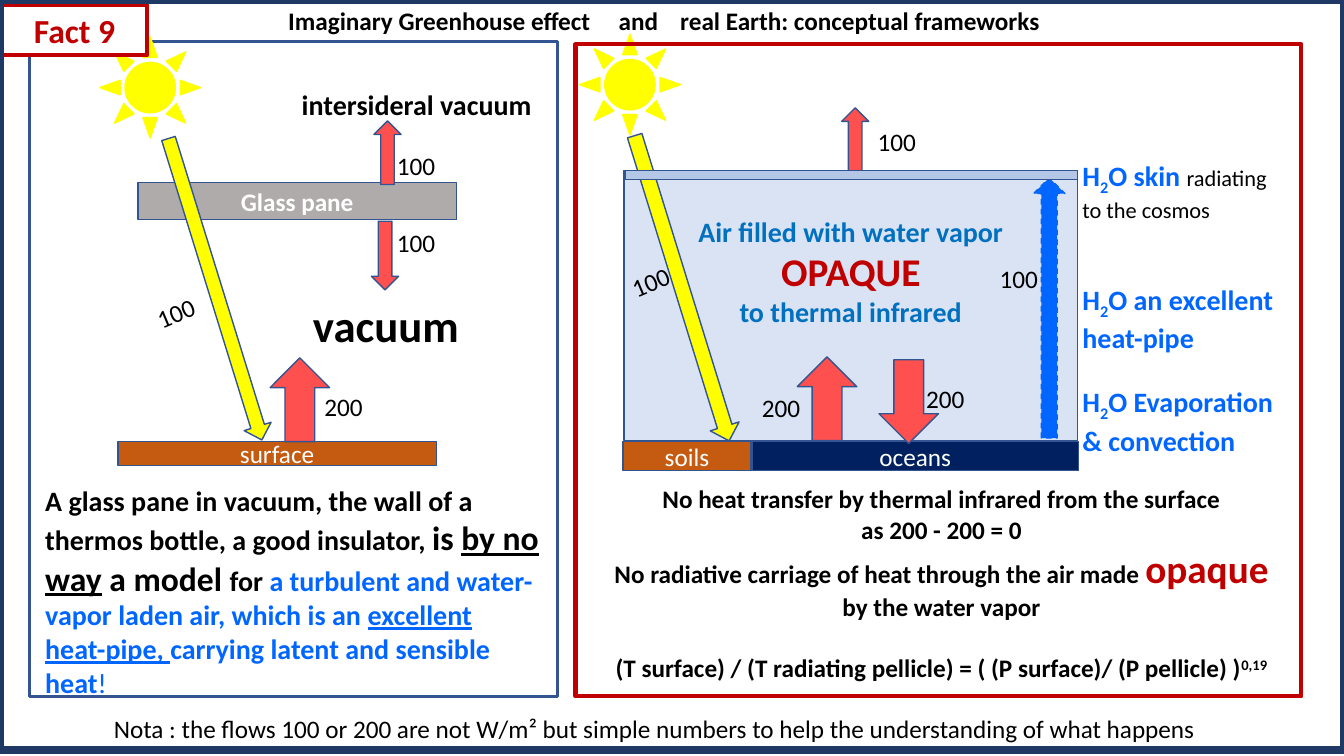
from dataclasses import dataclass

from pptx import Presentation
from pptx.dml.color import RGBColor
from pptx.enum.dml import MSO_LINE
from pptx.enum.shapes import MSO_SHAPE
from pptx.enum.text import MSO_ANCHOR, MSO_AUTO_SIZE, PP_ALIGN
from pptx.util import Pt


@dataclass(frozen=True)
class Theme:
    font: str = "Calibri"
    black: str = "000000"
    white: str = "FFFFFF"
    edge: str = "325491"
    frame: str = "203864"
    dark_red: str = "C00000"
    red: str = "FF5050"
    yellow: str = "FFFF00"
    water: str = "0066FF"
    vapor: str = "0070C0"
    air: str = "DAE3F3"
    skin: str = "B4C7E7"
    glass: str = "AFABAB"
    soil: str = "C55A11"
    sea: str = "002060"
    small: int = 16
    body: int = 18
    large: int = 20
    title: int = 24
    loud: int = 28
    huge: int = 32


T = Theme()
PLAIN = {"size": T.body, "color": T.black}
BOLD = PLAIN | {"bold": True}
LABEL = PLAIN | {"color": T.white}
LEAD = BOLD | {"size": T.large}
STRONG = BOLD | {"size": T.title}
BLUE = LEAD | {"color": T.water}
VAPOR = LEAD | {"color": T.vapor}
OPAQUE = BOLD | {"size": T.loud, "color": T.dark_red}
NOTE = PLAIN | {"size": T.small}
LINED = {"underline": True}
SUB = BLUE | {"baseline": -25000}
SUPER = BOLD | {"baseline": 30000}


def style(run, form):
    font = run.font
    font.name = T.font
    for name, value in form.items():
        if name == "color":
            font.color.rgb = RGBColor.from_string(value)
        elif name == "baseline":
            run._r.get_or_add_rPr().set(name, str(value))
        else:
            setattr(font, name, Pt(value) if name == "size" else value)


def write(frame, paras, align=PP_ALIGN.CENTER, gaps=None):
    """Fill a frame; each paragraph is a list of (text, format) runs."""
    frame.word_wrap = True
    for i, runs in enumerate(paras):
        para = frame.add_paragraph() if i else frame.paragraphs[0]
        para.alignment = align
        if gaps and i in gaps:
            para.space_before = Pt(gaps[i])
        for text, form in runs:
            run = para.add_run()
            run.text = text
            style(run, form)


def add_text(slide, place, paras, align=PP_ALIGN.LEFT, turn=0, gaps=None):
    box = slide.shapes.add_textbox(*map(Pt, place))
    box.rotation = turn
    write(box.text_frame, paras, align, gaps)
    box.text_frame.auto_size = MSO_AUTO_SIZE.SHAPE_TO_FIT_TEXT
    return box


def add_form(slide, place, fill=None, edge=T.edge, width=1, kind=MSO_SHAPE.RECTANGLE):
    form = slide.shapes.add_shape(kind, *map(Pt, place))
    form.shadow.inherit = False
    if fill:
        form.fill.solid()
        form.fill.fore_color.rgb = RGBColor.from_string(fill)
    else:
        form.fill.background()
    form.line.color.rgb = RGBColor.from_string(edge)
    form.line.width = Pt(width)
    return form


def add_bar(slide, place, fill, paras):
    bar = add_form(slide, place, fill)
    bar.text_frame.vertical_anchor = MSO_ANCHOR.MIDDLE
    write(bar.text_frame, paras)
    return bar


def add_arrow(slide, mid, size, turn, fill=T.red, edge=T.edge):
    """Place an arrow by its centre, (length, width) and clockwise turn."""
    (x, y), (long, wide) = mid, size
    arrow = add_form(slide, (x - long / 2, y - wide / 2, long, wide), fill, edge,
                     kind=MSO_SHAPE.RIGHT_ARROW)
    arrow.rotation = turn
    return arrow


def draw_air(slide):
    air = add_bar(slide, (445.7, 121.7, 324, 193), T.air, [
        [("Air filled with water vapor", VAPOR)],
        [("OPAQUE", OPAQUE)],
        [("to thermal infrared", VAPOR)]])
    air.text_frame.margin_bottom = Pt(52.4)


def draw_flows(slide):
    up, down, slant = 270, 90, 72.8
    thick, thin = (59.8, 42.5), (45.4, 19.4)
    add_arrow(slide, (153.7, 206.6), (225.4, 20.2), slant, T.yellow)
    add_arrow(slide, (487.1, 205.9), (228.2, 21.6), slant, T.yellow)
    for mid, size, turn in [
            ((214.2, 285.5), thick, up), ((275, 182.5), (49, 19.4), down),
            ((276.8, 109.1), thin, up), ((590.8, 284.8), thick, up),
            ((649.1, 286.9), thick, down), ((610.9, 99.7), thin, up)]:
        add_arrow(slide, mid, size, turn)
    pipe = add_arrow(slide, (749.5, 220), (185.8, 22.3), up, T.water, T.water)
    pipe.line.dash_style = MSO_LINE.DASH
    add_form(slide, (446.4, 121.7, 323.3, 6.5), T.skin)
    tilt = 337.2
    for text, x, y, turn in [
            ("100", 104.4, 206.6, tilt), ("100", 443.5, 185, tilt),
            ("100", 276.5, 159.1, 0), ("100", 276.5, 103.7, 0),
            ("100", 619.9, 86.4, 0), ("100", 707, 184.3, 0),
            ("200", 224.6, 275.8, 0), ("200", 537.1, 276.5, 0),
            ("200", 654.5, 270, 0)]:
        add_text(slide, (x, y, 52.6, 29), [[(text, PLAIN)]], turn=turn)


def draw_water(slide):
    for y, wide, text, more, rest in [
            (271.4, 157.7, "O Evaporation & convection", [], []),
            (198, 157.7, "O an excellent heat-pipe", [], []),
            (109.4, 176.4, "O skin ", [("radiating", NOTE)], [[("to the cosmos", NOTE)]])]:
        first = [("H", BLUE), ("2", SUB), (text, BLUE)] + more
        add_text(slide, (766.1, y, wide, 55), [first] + rest)


def draw_claims(slide):
    add_text(slide, (25.2, 342, 368.6, 162.7), [
        [("A glass pane in vacuum, the wall of a thermos bottle, a good insulator, ", LEAD),
         ("is ", STRONG), ("by no way", STRONG | LINED), (" a model ", STRONG),
         ("for ", LEAD), ("a turbulent and water-vapor laden air, which is an ", BLUE),
         ("excellent", BLUE | LINED)],
        [("heat-pipe, ", BLUE | LINED), ("carrying latent and sensible heat", BLUE),
         ("!", BLUE | {"bold": False})]])
    add_text(slide, (420.5, 342, 504, 150.5), [
        [("No heat transfer by thermal infrared from the surface", BOLD)],
        [("as 200 - 200 = 0", BOLD)],
        [("No radiative carriage of heat through the air made ", BOLD), ("opaque", OPAQUE)],
        [("by the water vapor", BOLD)],
        [("(T surface) / (T radiating pellicle) = ( (P surface)/ (P pellicle) )", BOLD),
         ("0,19", SUPER)]], PP_ALIGN.CENTER, gaps={4: 22})


def draw_heads(slide):
    head = add_text(slide, (198.8, 0, 600, 29), [
        [("Imaginary Greenhouse effect\tand\treal Earth: conceptual frameworks", BOLD)]])
    tabs = head.text_frame.paragraphs[0]._p.get_or_add_pPr()
    stops = tabs.makeelement(tabs.tag.replace("pPr", "tabLst"), {})
    tabs.append(stops)
    for stop in (236, 280):
        stops.append(tabs.makeelement(tabs.tag.replace("pPr", "tab"),
                                      {"pos": str(Pt(stop)), "algn": "l"}))
    fact = add_form(slide, (1.4, 3.6, 103.7, 36), T.white, T.dark_red, 3)
    write(fact.text_frame, [[("Fact 9", STRONG | {"color": T.dark_red})]])


def main():
    deck = Presentation()
    deck.slide_width, deck.slide_height = Pt(960), Pt(540)
    slide = deck.slides.add_slide(deck.slide_layouts[6])
    draw_air(slide)
    for place, text, size in [
            ((199, 59, 197.3, 31.7), "intersideral vacuum", T.large),
            ((177.1, 208.8, 197.3, 46), "vacuum", T.huge)]:
        add_text(slide, place, [[(text, BOLD | {"size": size})]], PP_ALIGN.CENTER)
    add_form(slide, (20.9, 29.5, 377.3, 468), width=2.25)
    add_text(slide, (12.6, 506.2, 910, 29), [
        [("Nota : the flows 100 or 200 are not W/m² but simple numbers "
          "to help the understanding of what happens", PLAIN)]], PP_ALIGN.CENTER)
    for place, fill, text, form in [
            ((98.6, 130.3, 227.5, 26.6), T.glass, "Glass pane", LABEL | {"bold": True}),
            ((84.2, 315.4, 227.5, 17.3), T.soil, "surface", LABEL),
            ((445, 315.4, 91.4, 20.9), T.soil, "soils", LABEL),
            ((537.1, 315.4, 233.3, 20.9), T.sea, "oceans", LABEL)]:
        add_bar(slide, place, fill, [[(text, form)]])
    for x, y in [(71.3, 26.6), (414, 24.5)]:
        add_form(slide, (x, y, 72, 72), T.yellow, T.yellow, kind=MSO_SHAPE.SUN)
    draw_flows(slide)
    draw_claims(slide)
    draw_water(slide)
    add_form(slide, (411.1, 31.7, 518.4, 465.8), edge=T.dark_red, width=3)
    draw_heads(slide)
    add_form(slide, (0, 0, 960, 535.7), edge=T.frame, width=6)
    deck.save("out.pptx")


if __name__ == "__main__":
    main()
